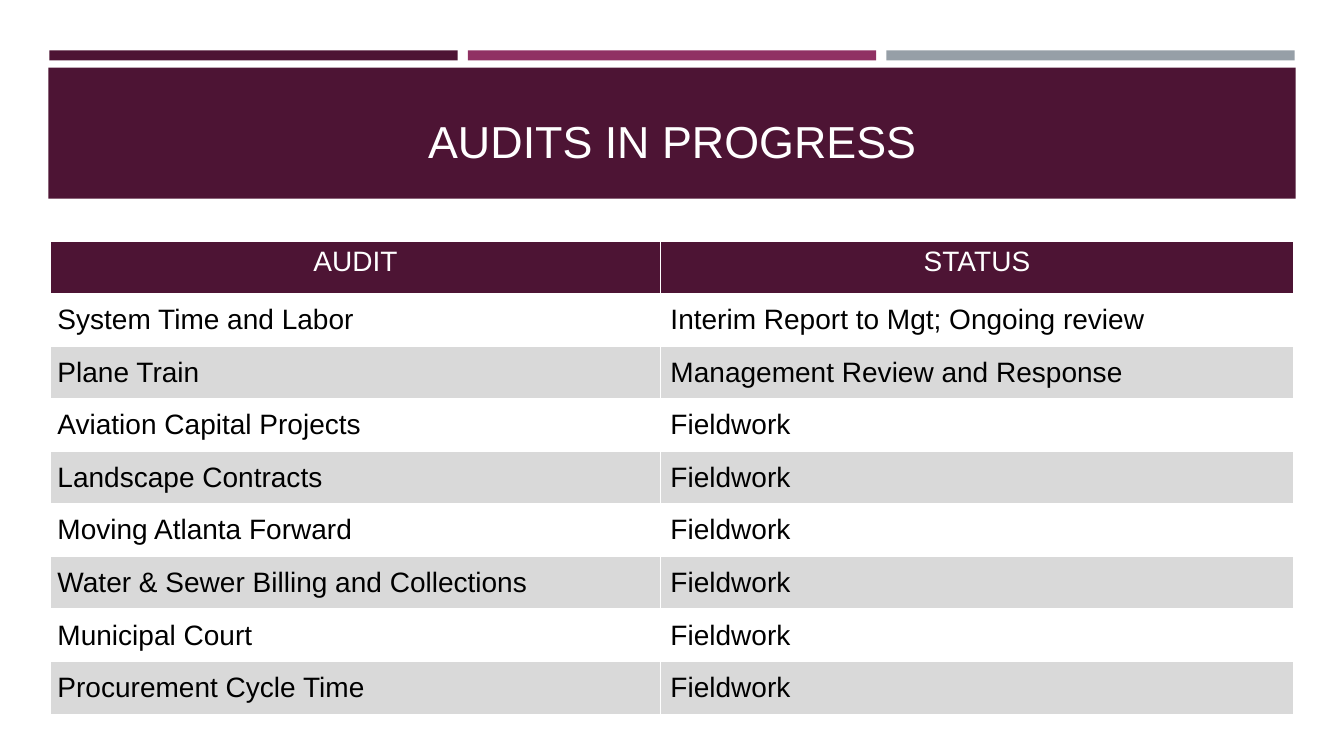
from pptx import Presentation
from pptx.dml.color import RGBColor
from pptx.enum.shapes import MSO_SHAPE
from pptx.enum.text import MSO_ANCHOR, PP_ALIGN
from pptx.util import Inches, Pt

RECT = MSO_SHAPE.RECTANGLE
CENTER, LEFT = PP_ALIGN.CENTER, PP_ALIGN.LEFT
TOP, MIDDLE, BOTTOM = MSO_ANCHOR.TOP, MSO_ANCHOR.MIDDLE, MSO_ANCHOR.BOTTOM

FONT = "Arial"
PLUM, WHITE, BLACK, GREY = "4D1434", "FFFFFF", "000000", "D9D9D9"
STRIPES = [PLUM, "903163", "969FA7"]
TITLE = "AUDITS IN PROGRESS"
WIDTHS = [6.05, 6.28]
ROW = 0.522
AUDITS = [
    ("AUDIT", "STATUS"),
    ("System Time and Labor", "Interim Report to Mgt; Ongoing review"),
    ("Plane Train", "Management Review and Response"),
    ("Aviation Capital Projects", "Fieldwork"),
    ("Landscape Contracts", "Fieldwork"),
    ("Moving Atlanta Forward", "Fieldwork"),
    ("Water & Sewer Billing and Collections", "Fieldwork"),
    ("Municipal Court", "Fieldwork"),
    ("Procurement Cycle Time", "Fieldwork"),
]


def color(code):
    """Turn a hex string into a colour."""
    return RGBColor.from_string(code)


def paint(fill, code):
    """Fill with one solid colour."""
    fill.solid()
    fill.fore_color.rgb = color(code)


def add_bar(slide, box, code):
    """Draw a plain rectangle."""
    bar = slide.shapes.add_shape(RECT, *map(Inches, box))
    bar.shadow.inherit = False
    paint(bar.fill, code)
    bar.line.fill.background()


def write(frame, text, size, code, align):
    """Put one styled paragraph in a text frame."""
    frame.word_wrap = True
    line = frame.paragraphs[0]
    line.text = text
    line.alignment = align
    line.font.name = FONT
    line.font.size = Pt(size)
    line.font.bold = False
    line.font.color.rgb = color(code)
    return line


def add_title(slide):
    """Draw the stripes, the banner and the title."""
    for i, code in enumerate(STRIPES):
        add_bar(slide, (0.49 + 4.15 * i, 0.5, 4.05, 0.1), code)
    add_bar(slide, (0.48, 0.67, 12.37, 1.3), PLUM)
    box = slide.shapes.add_textbox(*map(Inches, (0.67, 0.92, 12, 0.79)))
    write(box.text_frame, TITLE, 32, WHITE, CENTER)
    box.text_frame.vertical_anchor = BOTTOM


def add_audits(slide):
    """Build the table of audits and their status."""
    size = (0.5, 2.39, sum(WIDTHS), ROW * len(AUDITS))
    table = slide.shapes.add_table(
        len(AUDITS), len(WIDTHS), *map(Inches, size)).table
    for col, width in zip(table.columns, WIDTHS):
        col.width = Inches(width)
    for r, audit in enumerate(AUDITS):
        head = r == 0
        shade = PLUM if head else WHITE if r % 2 else GREY
        for c, text in enumerate(audit):
            cell = table.cell(r, c)
            paint(cell.fill, shade)
            cell.vertical_anchor = TOP if head else MIDDLE
            line = write(cell.text_frame, text, 20,
                         WHITE if head else BLACK, CENTER if head else LEFT)
            if head:
                line.space_before = Pt(6)
            elif c == 0:
                cell.margin_left = cell.margin_right = Inches(0.07)
                cell.margin_top = cell.margin_bottom = 0


def main():
    """Build and save the slide."""
    deck = Presentation()
    deck.slide_width, deck.slide_height = Inches(13.33), Inches(7.5)
    slide = deck.slides.add_slide(deck.slide_layouts[6])
    add_title(slide)
    add_audits(slide)
    deck.save("out.pptx")


if __name__ == "__main__":
    main()
